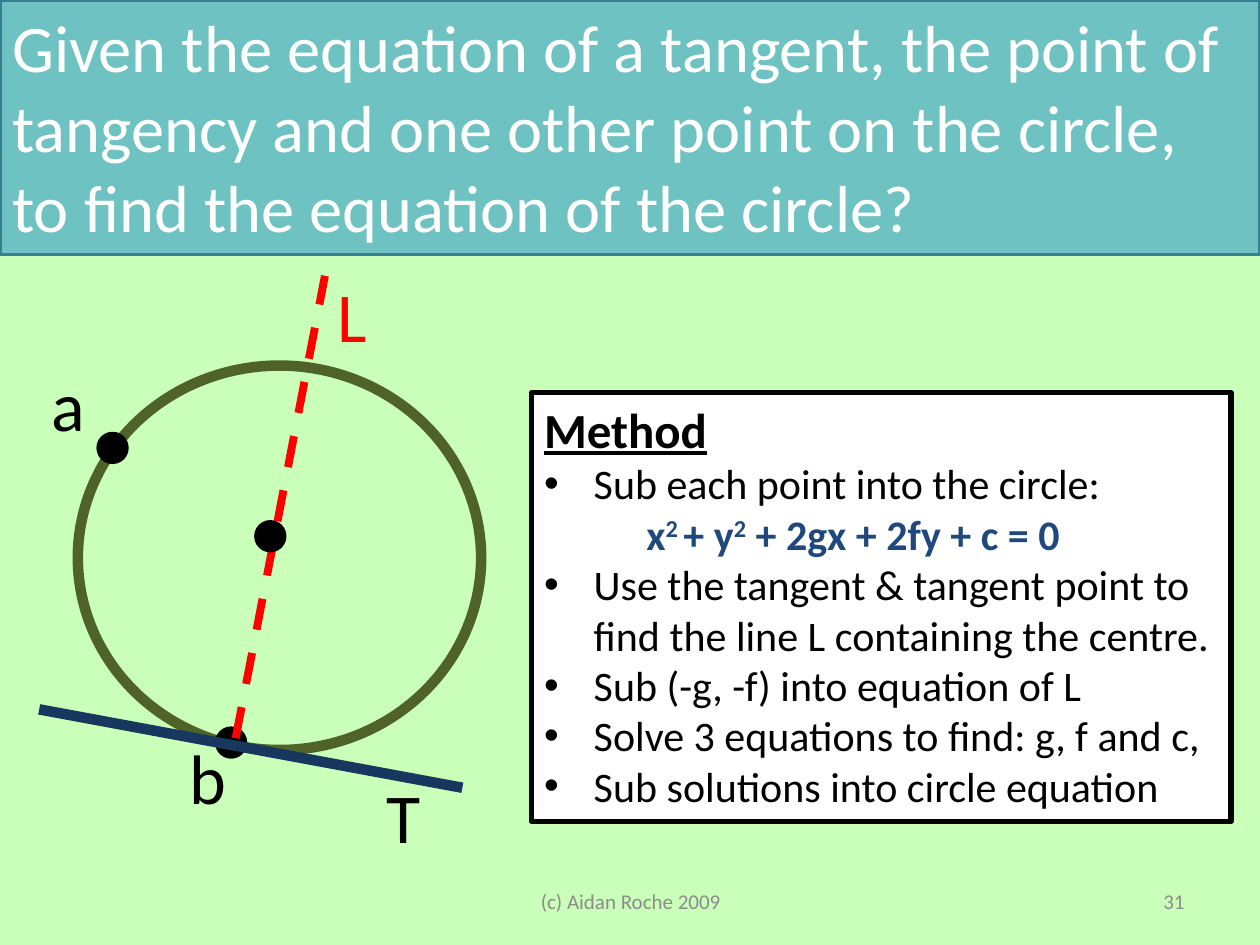
from lxml import etree
from pptx import Presentation
from pptx.dml.color import RGBColor
from pptx.enum.dml import MSO_LINE
from pptx.enum.shapes import MSO_CONNECTOR, MSO_SHAPE
from pptx.enum.text import MSO_ANCHOR, PP_ALIGN
from pptx.oxml.ns import qn
from pptx.util import Cm, Pt

OVAL, RECT = MSO_SHAPE.OVAL, MSO_SHAPE.RECTANGLE
LINE, DASH = MSO_CONNECTOR.STRAIGHT, MSO_LINE.DASH
TOP, MID = MSO_ANCHOR.TOP, MSO_ANCHOR.MIDDLE
LEFT, MIDST, RIGHT = PP_ALIGN.LEFT, PP_ALIGN.CENTER, PP_ALIGN.RIGHT

hue = {
    "back": "C9FFB8", "title": "4BACC6", "edge": "377F92", "ring": "4F6228",
    "black": "000000", "white": "FFFFFF", "math": "1F497D", "tan": "17375E",
    "red": "FF0000", "grey": "8C8C8C",
}


def draw(kind, spot, fill, edge, width):
    item = slide.shapes.add_shape(kind, *[Cm(n) for n in spot])
    item.shadow.inherit = False
    if fill:
        item.fill.solid()
        item.fill.fore_color.rgb = RGBColor.from_string(hue[fill])
    else:
        item.fill.background()
    item.line.color.rgb = RGBColor.from_string(hue[edge])
    item.line.width = Pt(width)
    return item


def write(para, text, size, tint, bold=False):
    run = para.add_run()
    run.text = text
    run.font.name = "Calibri"
    run.font.size = Pt(size)
    run.font.bold = bold
    run.font.color.rgb = RGBColor.from_string(hue[tint])
    return run


deck = Presentation()
deck.slide_width, deck.slide_height = Cm(25.4), Cm(19.05)
slide = deck.slides.add_slide(deck.slide_layouts[6])
slide.background.fill.solid()
slide.background.fill.fore_color.rgb = RGBColor.from_string(hue["back"])

draw(OVAL, (1.57, 7.37, 8.13, 7.75), None, "ring", 6)
for x, y in [(1.98, 8.74), (4.37, 14.68)]:
    draw(OVAL, (x, y, 0.58, 0.58), "black", "black", 2)

title = draw(RECT, (0, 0, 25.4, 5.13), "title", "edge", 2)
tone = title.fill._xPr.find(qn("a:solidFill"))[0]
etree.SubElement(tone, qn("a:alpha"), val="72000")
title.text_frame.word_wrap = True
title.text_frame.vertical_anchor = TOP
para = title.text_frame.paragraphs[0]
para.alignment = LEFT
write(para, "Given the equation of a tangent, the point of tangency and one "
      "other point on the circle, to find the equation of the circle?", 38, "white")

panel = draw(RECT, (10.72, 7.92, 14.1, 8.64), "white", "black", 3)
frame = panel.text_frame
frame.word_wrap = True
frame.vertical_anchor = TOP
para = frame.paragraphs[0]
para.alignment = LEFT
write(para, "Method", 28, "black", True).font.underline = True

formula = [("x", 0), ("2 ", 30), ("+ y", 0), ("2", 30), (" + 2gx + 2fy + c = 0", 0)]
steps = [
    "Sub each point into the circle:",
    formula,
    "Use the tangent & tangent point to find the line L containing the centre.",
    "Sub (-g, -f) into equation of L",
    "Solve 3 equations to find: g, f and c,",
    "Sub solutions into circle equation",
]
for step in steps:
    para = frame.add_paragraph()
    para.alignment = LEFT
    props = para._p.get_or_add_pPr()
    if step is formula:
        props.set("marL", str(Cm(2.06)))
        props.set("indent", "0")
        for text, lift in formula:
            run = write(para, text, 24, "math", True)
            if lift:
                run.font._element.set("baseline", str(lift * 1000))
    else:
        props.set("marL", str(Cm(1)))
        props.set("indent", str(-Cm(1)))
        etree.SubElement(props, qn("a:buFont"), typeface="Arial")
        etree.SubElement(props, qn("a:buChar"), char="•")
        write(para, step, 24, "black")

lines = [
    ((0.79, 14.3, 9.32, 15.88), "tan", 6, None),
    ((4.75, 14.88, 6.55, 5.56), "red", 4.5, DASH),
]
for ends, tint, width, dash in lines:
    line = slide.shapes.add_connector(LINE, *[Cm(n) for n in ends])
    line.line.color.rgb = RGBColor.from_string(hue[tint])
    line.line.width = Pt(width)
    if dash:
        line.line.dash_style = dash
    etree.SubElement(line._element.spPr, qn("a:effectLst"))

draw(OVAL, (5.16, 10.52, 0.58, 0.58), "black", "black", 2)

labels = [
    ("a", (0.79, 7.16, 1.19, 1.96), 40, "black", LEFT, TOP),
    ("b", (3.58, 14.68, 1.27, 1.96), 40, "black", LEFT, TOP),
    ("T", (7.54, 15.47, 1.78, 1.96), 40, "black", LEFT, TOP),
    ("L", (6.55, 5.36, 1.12, 1.96), 40, "red", LEFT, TOP),
    ("(c) Aidan Roche 2009", (8.69, 17.65, 8.05, 1.02), 12, "grey", MIDST, MID),
    ("31", (18.21, 17.65, 5.92, 1.02), 12, "grey", RIGHT, MID),
]
for text, spot, size, tint, side, hold in labels:
    box = slide.shapes.add_textbox(*[Cm(n) for n in spot])
    box.text_frame.word_wrap = True
    box.text_frame.vertical_anchor = hold
    para = box.text_frame.paragraphs[0]
    para.alignment = side
    write(para, text, size, tint)

deck.save("out.pptx")
